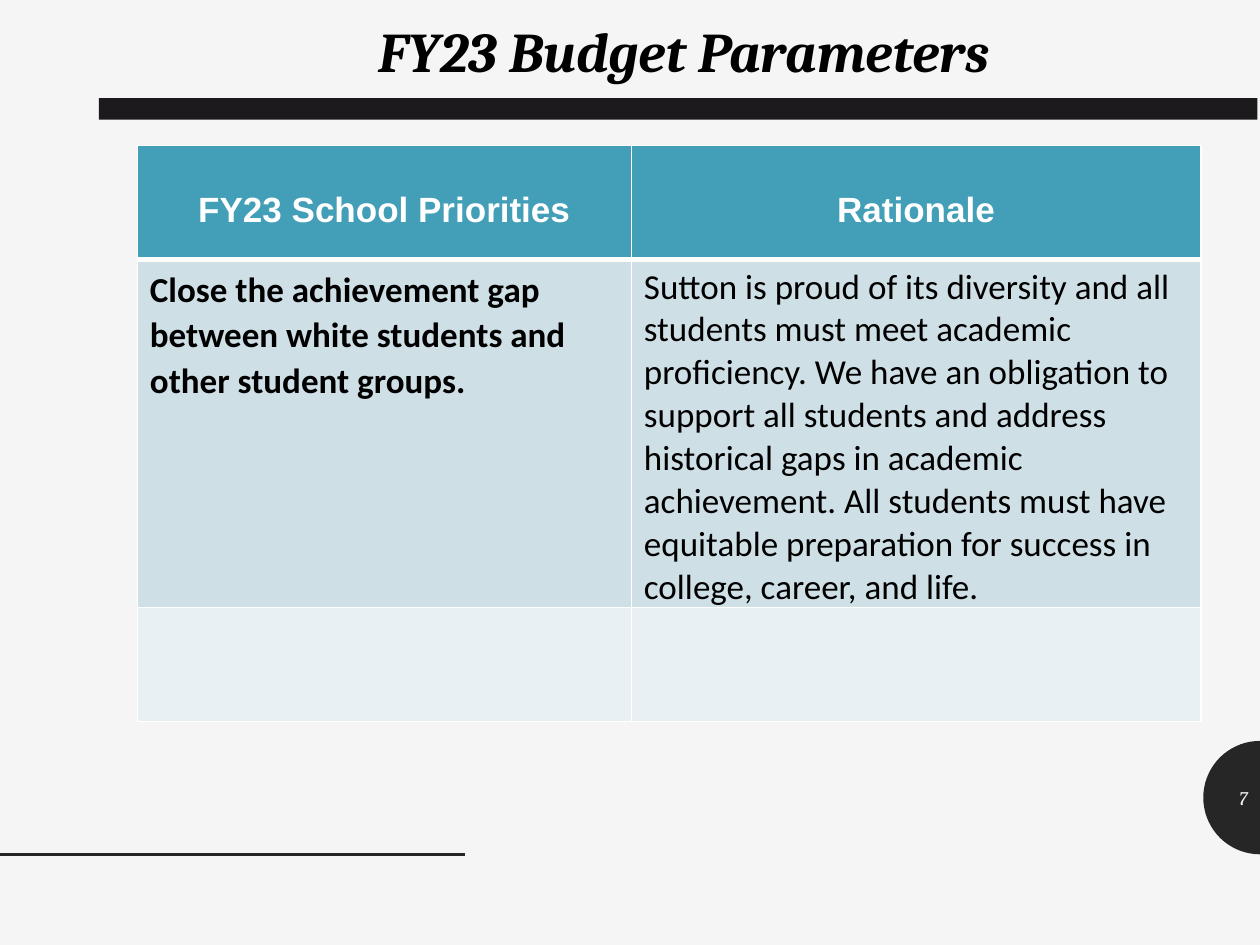
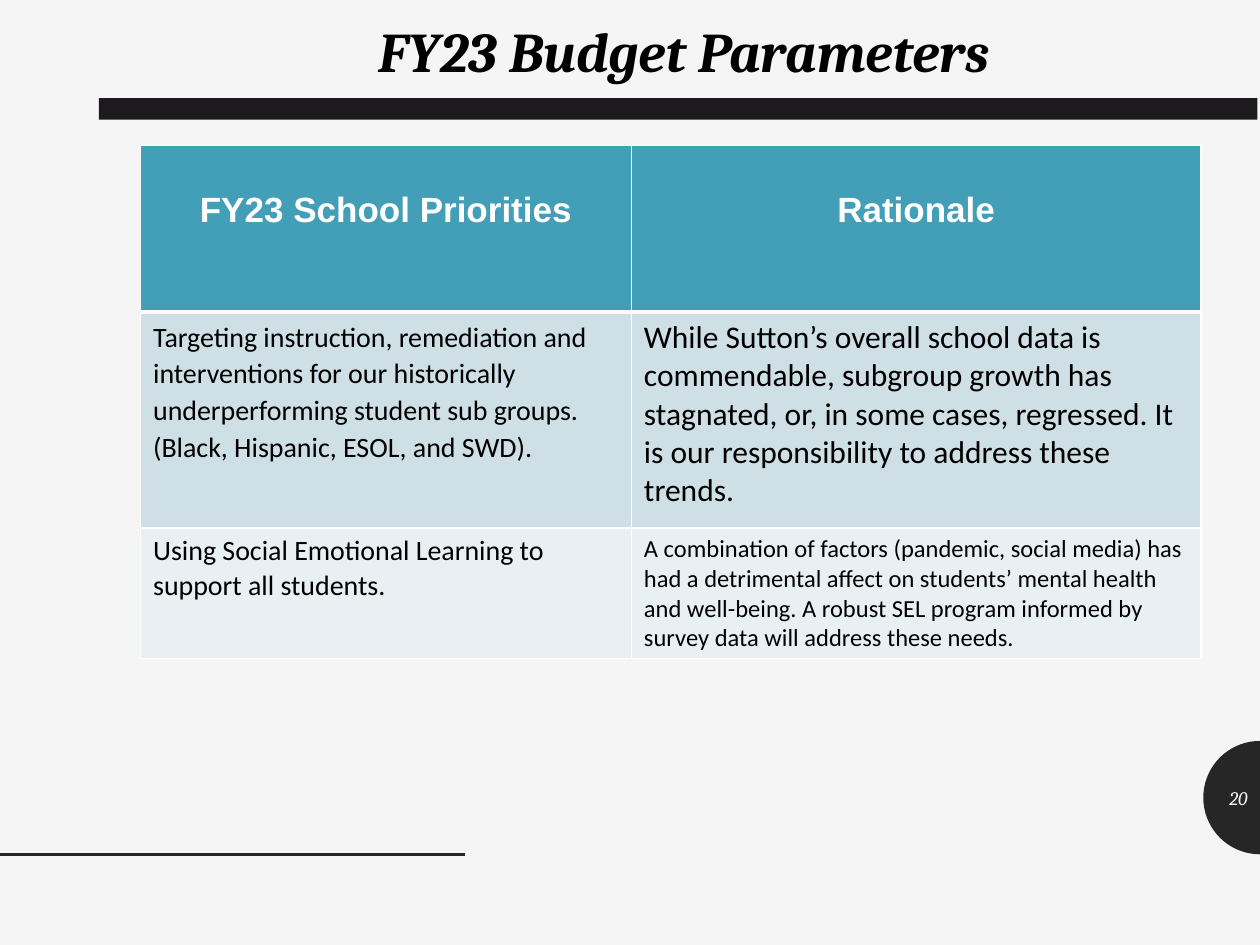
import math
from dataclasses import dataclass
from lxml import etree
from pptx import Presentation
from pptx import util as u
from pptx.dml.color import RGBColor as Rgb
from pptx.enum import shapes, text
from pptx.oxml import ns


@dataclass(frozen=True)
class Theme:
    back: str = "F5F5F5"
    dark: str = "262626"
    band: str = "1D1A1D"
    head: str = "439EB7"
    rows: tuple = ("CFDFE6", "E9F0F3")
    ink: str = "000000"
    white: str = "FFFFFF"
    serif: str = "Cambria"
    sans: str = "Arial"
    body: str = "Calibri"
    title: int = 32
    label: int = 20
    page: int = 11


def write(frame, words, face, size, color, align, bold=False, slant=False):
    par = frame.paragraphs[0]
    par.alignment = align
    run = par.add_run()
    run.text = words
    font = run.font
    font.name, font.size = face, u.Pt(size)
    font.bold, font.italic = bold, slant
    font.color.rgb = Rgb.from_string(color)
    return par


def paint(cell, fill, base):
    props = cell._tc.get_or_add_tcPr()
    for side, wide in (("L", 1), ("R", 1), ("T", 1), ("B", base)):
        edge = etree.SubElement(props, ns.qn(f"a:ln{side}"), w=str(u.Pt(wide)))
        solid = etree.SubElement(edge, ns.qn("a:solidFill"))
        etree.SubElement(solid, ns.qn("a:srgbClr"), val=theme.white)
    cell.fill.solid()
    cell.fill.fore_color.rgb = Rgb.from_string(fill)


theme = Theme()
left, mid, right = text.PP_ALIGN.LEFT, text.PP_ALIGN.CENTER, text.PP_ALIGN.RIGHT
heads = ("FY23 School Priorities", "Rationale")
split, edge, top = 360.8, 686.3, 83.2

pages = [
    dict(
        page="7", start=78.5, high=(65, 199, 65),
        cells=[
            [("Close the achievement gap between white students and other student groups.", 20, True, 1.07),
             ("Sutton is proud of its diversity and all students must meet academic proficiency. "
              "We have an obligation to support all students and address historical gaps in academic "
              "achievement. All students must have equitable preparation for success in college, "
              "career, and life.", 20, False, 1)],
            [],
        ],
    ),
    dict(
        page="20", start=80.3, high=(95, 123.5, 74.5),
        cells=[
            [("Targeting instruction, remediation and interventions for our historically "
              "underperforming student sub groups. (Black, Hispanic, ESOL, and SWD).", 16, False, 1.07),
             ("While Sutton’s overall school data is commendable, subgroup growth has stagnated, or, "
              "in some cases, regressed. It is our responsibility to address these trends.", 18, False, 1)],
            [("Using Social Emotional Learning to support all students.", 16, False, 1),
             ("A combination of factors (pandemic, social media) has had a detrimental affect on "
              "students’ mental health and well-being. A robust SEL program informed by "
              "survey data will address these needs.", 14, False, 1)],
        ],
    ),
]

deck = Presentation()
deck.slide_width, deck.slide_height = u.Pt(720), u.Pt(540)
ground = deck.slide_master.background.fill
ground.solid()
ground.fore_color.rgb = Rgb.from_string(theme.back)

turns = [math.pi * n / 36 for n in range(37)]
arc = [(72000 - 3240 * math.sin(turn), 45580 - 3240 * math.cos(turn)) for turn in turns]

for data in pages:
    slide = deck.slides.add_slide(deck.slide_layouts[5])

    pen = slide.shapes.build_freeform(*arc[0], scale=u.Pt(0.01))
    pen.add_line_segments(arc[1:], close=True)
    disc = pen.convert_to_shape()
    band = slide.shapes.add_shape(shapes.MSO_SHAPE.RECTANGLE, u.Pt(56.5), u.Pt(56), u.Pt(662), u.Pt(12.4))
    for form, tone in ((disc, theme.dark), (band, theme.band)):
        form.shadow.inherit = False
        form.fill.solid()
        form.fill.fore_color.rgb = Rgb.from_string(tone)
        form.line.fill.background()

    rule = slide.shapes.add_connector(shapes.MSO_CONNECTOR.STRAIGHT, 0, u.Pt(488.2), u.Pt(265.7), u.Pt(488.2))
    rule.line.width = u.Pt(2)
    rule.line.color.rgb = Rgb.from_string(theme.dark)
    etree.SubElement(rule.element.spPr, ns.qn("a:effectLst"))

    title = slide.shapes.title
    title.left, title.top, title.width, title.height = u.Pt(69.4), u.Pt(5.8), u.Pt(643), u.Pt(46)
    frame = title.text_frame
    frame.vertical_anchor = text.MSO_ANCHOR.TOP
    frame.auto_size = text.MSO_AUTO_SIZE.NONE
    write(frame, "FY23 Budget Parameters", theme.serif, theme.title, theme.ink, mid, True, True)

    page = slide.shapes.add_textbox(u.Pt(687.6), u.Pt(441.4), u.Pt(32.4), u.Pt(28.8)).text_frame
    page.word_wrap = True
    page.vertical_anchor = text.MSO_ANCHOR.MIDDLE
    write(page, data["page"], theme.serif, theme.page, theme.back, right, slant=True)

    start, high = data["start"], data["high"]
    grid = slide.shapes.add_table(3, 2, u.Pt(start), u.Pt(top), u.Pt(edge - start), u.Pt(sum(high))).table
    for col, wide in zip(grid.columns, (split - start, edge - split)):
        col.width = u.Pt(wide)
    for row, tall in zip(grid.rows, high):
        row.height = u.Pt(tall)

    for cell, words in zip(grid.rows[0].cells, heads):
        paint(cell, theme.head, 3)
        cell.margin_top = u.Pt(26)
        write(cell.text_frame, words, theme.sans, theme.label, theme.white, mid, True)

    for n, items in enumerate(data["cells"]):
        cells = grid.rows[n + 1].cells
        for cell in cells:
            paint(cell, theme.rows[n], 1)
            cell.margin_bottom = 0
        for cell, (words, size, bold, space) in zip(cells, items):
            par = write(cell.text_frame, words, theme.body, size, theme.ink, left, bold)
            par.line_spacing = space

deck.save("out.pptx")
